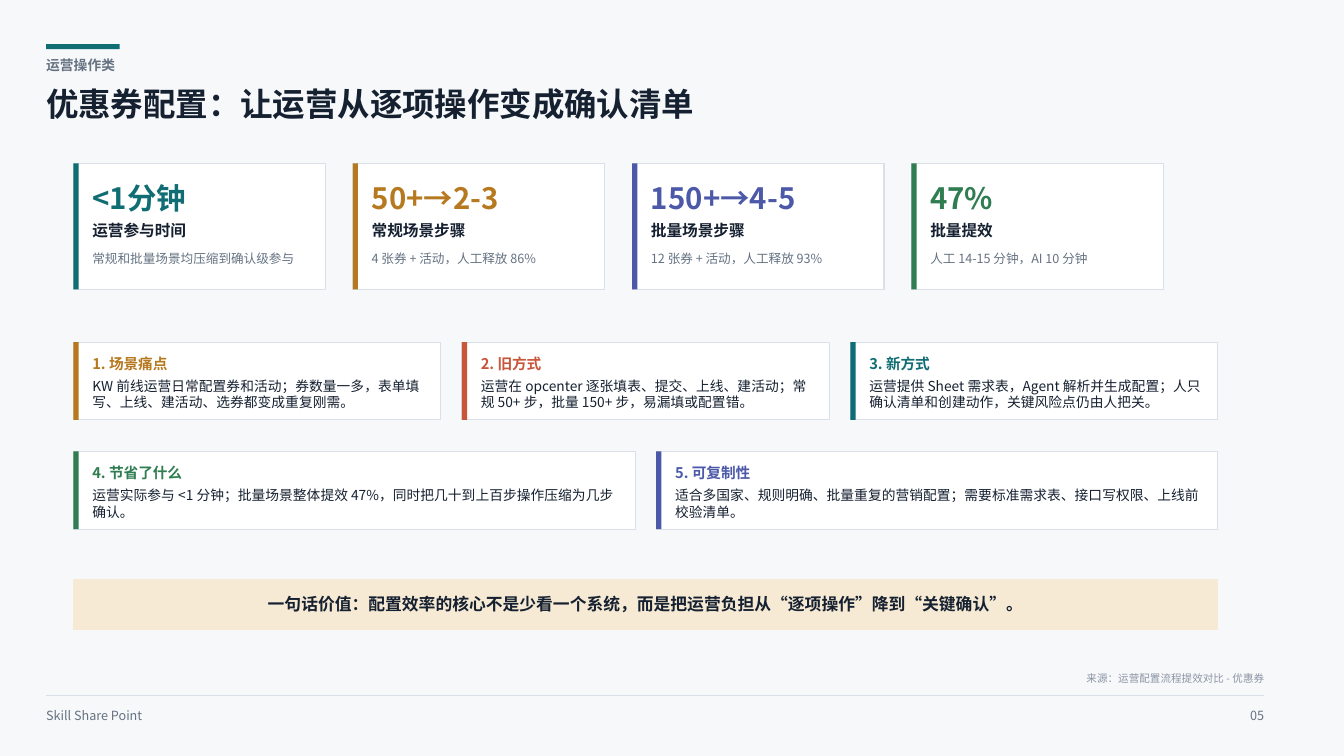
from pptx import Presentation
from pptx.dml.color import RGBColor
from pptx.enum.shapes import MSO_CONNECTOR as Connector, MSO_SHAPE as Shape
from pptx.enum.text import PP_ALIGN as Align
from pptx.oxml.ns import qn
from pptx.util import Pt
from lxml.etree import SubElement

INK, MUTED, FAINT = "152030", "657282", "8A94A3"
PAPER, WHITE, RULE, SAND = "F7F8FA", "FFFFFF", "D9E0E8", "F6EAD4"
TEAL, AMBER, INDIGO, GREEN, RED = "0F6D73", "B7791F", "4C59A8", "2F7D51", "C9553A"

MARGIN, RIGHT = 33, 903
BODY_LEFT, BODY_WIDTH = 52.5, 817.5
ACCENT, INSET = 3.75, 13.5


def rgb(hex_color):
    return RGBColor.from_string(hex_color)


class Page:
    font = "Noto Sans CJK SC"

    def __init__(self, slide):
        self.slide = slide
        slide.background.fill.solid()
        slide.background.fill.fore_color.rgb = rgb(PAPER)

    def block(self, left, top, width, height, fill, border=None):
        block = self.slide.shapes.add_shape(
            Shape.RECTANGLE, Pt(left), Pt(top), Pt(width), Pt(height))
        block.shadow.inherit = False
        block.fill.solid()
        block.fill.fore_color.rgb = rgb(fill)
        if border:
            block.line.color.rgb = rgb(border)
            block.line.width = Pt(0.75)
        else:
            block.line.fill.background()

    def rule(self, left, right, y):
        rule = self.slide.shapes.add_connector(
            Connector.STRAIGHT, Pt(left), Pt(y), Pt(right), Pt(y))
        rule.line.color.rgb = rgb(RULE)
        rule.line.width = Pt(0.75)
        SubElement(rule._element.spPr, qn("a:effectLst"))

    def text(self, words, left, top, width, height, size, color,
             bold=False, align=Align.LEFT):
        frame = self.slide.shapes.add_textbox(
            Pt(left), Pt(top), Pt(width), Pt(height)).text_frame
        frame.margin_left = frame.margin_right = 0
        frame.margin_top = frame.margin_bottom = 0
        frame.word_wrap = True
        frame.text = words
        paragraph = frame.paragraphs[0]
        paragraph.alignment = align
        for run in paragraph.runs:
            run.font.name = self.font
            run.font.size = Pt(size)
            run.font.bold = bold
            run.font.color.rgb = rgb(color)
            east_asian = SubElement(run._r.get_or_add_rPr(), qn("a:ea"))
            east_asian.set("typeface", self.font)

    def card(self, left, top, width, height, color):
        self.block(left, top, width, height, WHITE, RULE)
        self.block(left, top, ACCENT, height, color)

    def metric(self, left, top, color, value, label, note):
        self.card(left, top, 180, 90, color)
        text_left, text_width = left + INSET, 159
        self.text(value, text_left, top + 12, text_width, 27, 21, color, True)
        self.text(label, text_left, top + 41.25, text_width, 18, 11.2, INK, True)
        self.text(note, text_left, top + 62.25, text_width, 19.5, 9, MUTED)

    def detail(self, left, top, width, color, heading, body):
        self.card(left, top, width, 55.5, color)
        text_left, text_width = left + INSET, width - 24
        self.text(heading, text_left, top + 8.75, text_width, 13.5, 10.5, color, True)
        self.text(body, text_left, top + 25.25, text_width, 24, 9.8, INK)

    def detail_row(self, top, details, gap=15):
        width = (BODY_WIDTH - gap * (len(details) - 1)) / len(details)
        for column, detail in enumerate(details):
            self.detail(BODY_LEFT + column * (width + gap), top, width, *detail)


METRICS = [
    (TEAL, "<1分钟", "运营参与时间", "常规和批量场景均压缩到确认级参与"),
    (AMBER, "50+→2-3", "常规场景步骤", "4 张券 + 活动，人工释放 86%"),
    (INDIGO, "150+→4-5", "批量场景步骤", "12 张券 + 活动，人工释放 93%"),
    (GREEN, "47%", "批量提效", "人工 14-15 分钟，AI 10 分钟"),
]
WORKFLOW = [
    (AMBER, "1. 场景痛点",
     "KW 前线运营日常配置券和活动；券数量一多，表单填写、上线、建活动、选券都变成重复刚需。"),
    (RED, "2. 旧方式",
     "运营在 opcenter 逐张填表、提交、上线、建活动；常规 50+ 步，批量 150+ 步，易漏填或配置错。"),
    (TEAL, "3. 新方式",
     "运营提供 Sheet 需求表，Agent 解析并生成配置；人只确认清单和创建动作，关键风险点仍由人把关。"),
]
OUTCOMES = [
    (GREEN, "4. 节省了什么",
     "运营实际参与 <1 分钟；批量场景整体提效 47%，同时把几十到上百步操作压缩为几步确认。"),
    (INDIGO, "5. 可复制性",
     "适合多国家、规则明确、批量重复的营销配置；需要标准需求表、接口写权限、上线前校验清单。"),
]


def main():
    deck = Presentation()
    deck.slide_width, deck.slide_height = Pt(960), Pt(540)
    page = Page(deck.slides.add_slide(deck.slide_layouts[6]))

    page.block(MARGIN, 31.5, 52.5, 3.75, TEAL)
    page.text("运营操作类", MARGIN, 40.5, 270, 18, 9.8, MUTED, True)
    page.text("优惠券配置：让运营从逐项操作变成确认清单",
              MARGIN, 60, 720, 36, 23.2, INK, True)

    for column, metric in enumerate(METRICS):
        page.metric(BODY_LEFT + column * 199.5, 116.75, *metric)
    page.detail_row(244.5, WORKFLOW)
    page.detail_row(322.5, OUTCOMES)

    page.block(BODY_LEFT, 414, BODY_WIDTH, 36, SAND, SAND)
    page.text("一句话价值：配置效率的核心不是少看一个系统，而是把运营负担从“逐项操作”降到“关键确认”。",
              72, 424, 778.5, 15, 12, INK, True, Align.CENTER)

    page.text("来源：运营配置流程提效对比 - 优惠券",
              RIGHT - 288, 480, 288, 12, 7.5, FAINT, align=Align.RIGHT)
    page.rule(MARGIN, RIGHT, 497)
    page.text("Skill Share Point", MARGIN, 505.5, 187.5, 13.5, 9, MUTED)
    page.text("05", RIGHT - 33, 505.5, 33, 13.5, 9, MUTED, align=Align.RIGHT)

    deck.save("out.pptx")


if __name__ == "__main__":
    main()
